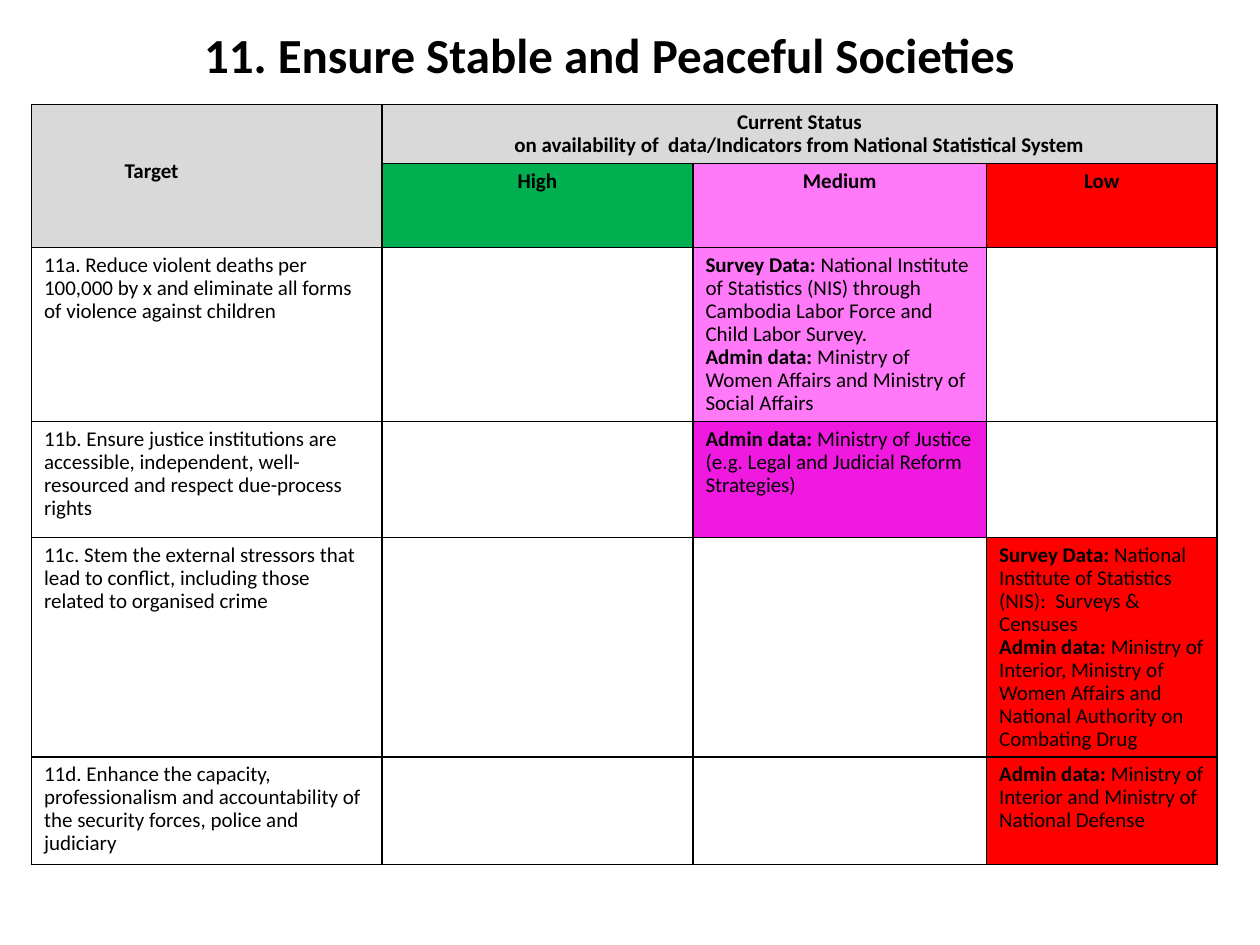
from lxml.etree import SubElement
from pptx import Presentation
from pptx.dml.color import RGBColor
from pptx.enum.text import MSO_ANCHOR, PP_ALIGN
from pptx.oxml.ns import qn
from pptx.util import Inches, Pt

BLACK, WHITE, GRAY = "000000", "FFFFFF", "D9D9D9"
GREEN, PINK, MAGENTA, RED = "00B050", "FF79F9", "EF19E0", "FF0000"


def color(hex_value):
    return RGBColor.from_string(hex_value)


def write(text_frame, paragraphs, size, align):
    for index, runs in enumerate(paragraphs):
        paragraph = text_frame.paragraphs[0] if index == 0 else text_frame.add_paragraph()
        for name, value in {"alignment": align, "line_spacing": 0.9}.items():
            setattr(paragraph, name, value)
        for text, bold in runs:
            run = paragraph.add_run()
            run.text = text
            for name, value in {"name": "Calibri", "size": Pt(size), "bold": bold}.items():
                setattr(run.font, name, value)
            run.font.color.rgb = color(BLACK)


presentation = Presentation()
presentation.slide_width, presentation.slide_height = Inches(10), Inches(7.5)
slide = presentation.slides.add_slide(presentation.slide_layouts[5])

title = slide.shapes.title
title_box = {"left": 0.5, "top": 0.08, "width": 8.67, "height": 0.75}
for name, value in title_box.items():
    setattr(title, name, Inches(value))
title.text_frame.vertical_anchor = MSO_ANCHOR.MIDDLE
write(title.text_frame, [[("11. Ensure Stable and Peaceful Societies", True)]], 28, PP_ALIGN.CENTER)

column_widths = [2.78, 2.47, 2.33, 1.83]
row_heights = [0.46, 0.67, 1.38, 0.92, 1.74, 0.85]
frame = slide.shapes.add_table(
    len(row_heights), len(column_widths), Inches(0.25), Inches(0.83),
    Inches(sum(column_widths)), Inches(sum(row_heights)),
)
table = frame.table
table.first_row = table.horz_banding = False
for column, width in zip(table.columns, column_widths):
    column.width = Inches(width)
for row, height in zip(table.rows, row_heights):
    row.height = Inches(height)

for cell in table.iter_cells():
    properties = cell._tc.get_or_add_tcPr()
    for side in ("a:lnL", "a:lnR", "a:lnT", "a:lnB"):
        line = SubElement(properties, qn(side), w=str(Pt(1)))
        SubElement(SubElement(line, qn("a:solidFill")), qn("a:srgbClr"), val=BLACK)
    cell.fill.solid()
    cell.fill.fore_color.rgb = color(WHITE)

table.cell(0, 0).merge(table.cell(1, 0))
table.cell(0, 1).merge(table.cell(0, 3))

headers = [
    (0, 0, GRAY, PP_ALIGN.LEFT, ["Target"]),
    (0, 1, GRAY, PP_ALIGN.CENTER, [
        "Current Status",
        "on availability of  data/Indicators from National Statistical System",
    ]),
    (1, 1, GREEN, PP_ALIGN.CENTER, ["High"]),
    (1, 2, PINK, PP_ALIGN.CENTER, ["Medium"]),
    (1, 3, RED, PP_ALIGN.CENTER, ["Low"]),
]
for row, column, fill, align, lines in headers:
    cell = table.cell(row, column)
    cell.fill.fore_color.rgb = color(fill)
    write(cell.text_frame, [[(line, True)] for line in lines], 12, align)

target_format = {
    "vertical_anchor": MSO_ANCHOR.MIDDLE,
    "margin_left": Inches(0.74),
    "margin_bottom": Inches(0.13),
}
for name, value in target_format.items():
    setattr(table.cell(0, 0), name, value)

targets = [
    ("11a. Reduce violent deaths per 100,000 by x and eliminate all forms of violence against children",
     2, PINK, [
         ("Survey Data:", " National Institute of Statistics (NIS) through Cambodia Labor Force and Child Labor Survey."),
         ("Admin data:", " Ministry of Women Affairs and Ministry of Social Affairs"),
     ]),
    ("11b. Ensure justice institutions are accessible, independent, well-resourced and respect due-process rights",
     2, MAGENTA, [
         ("Admin data:", " Ministry of Justice (e.g. Legal and Judicial Reform  Strategies)"),
     ]),
    ("11c. Stem the external stressors that lead to conflict, including those related to organised crime",
     3, RED, [
         ("Survey Data:", " National Institute of Statistics (NIS):  Surveys & Censuses"),
         ("Admin data:", " Ministry of Interior, Ministry of Women Affairs and National Authority on Combating Drug"),
     ]),
    ("11d. Enhance the capacity, professionalism and accountability of the security forces, police and judiciary",
     3, RED, [
         ("Admin data:", " Ministry of Interior and Ministry of National Defense"),
     ]),
]
for row, (target, column, fill, sources) in enumerate(targets, start=2):
    write(table.cell(row, 0).text_frame, [[(target, False)]], 12, PP_ALIGN.LEFT)
    cell = table.cell(row, column)
    cell.fill.fore_color.rgb = color(fill)
    paragraphs = [[(label, True), (text, False)] for label, text in sources]
    write(cell.text_frame, paragraphs, 12, PP_ALIGN.LEFT)

presentation.save("out.pptx")
